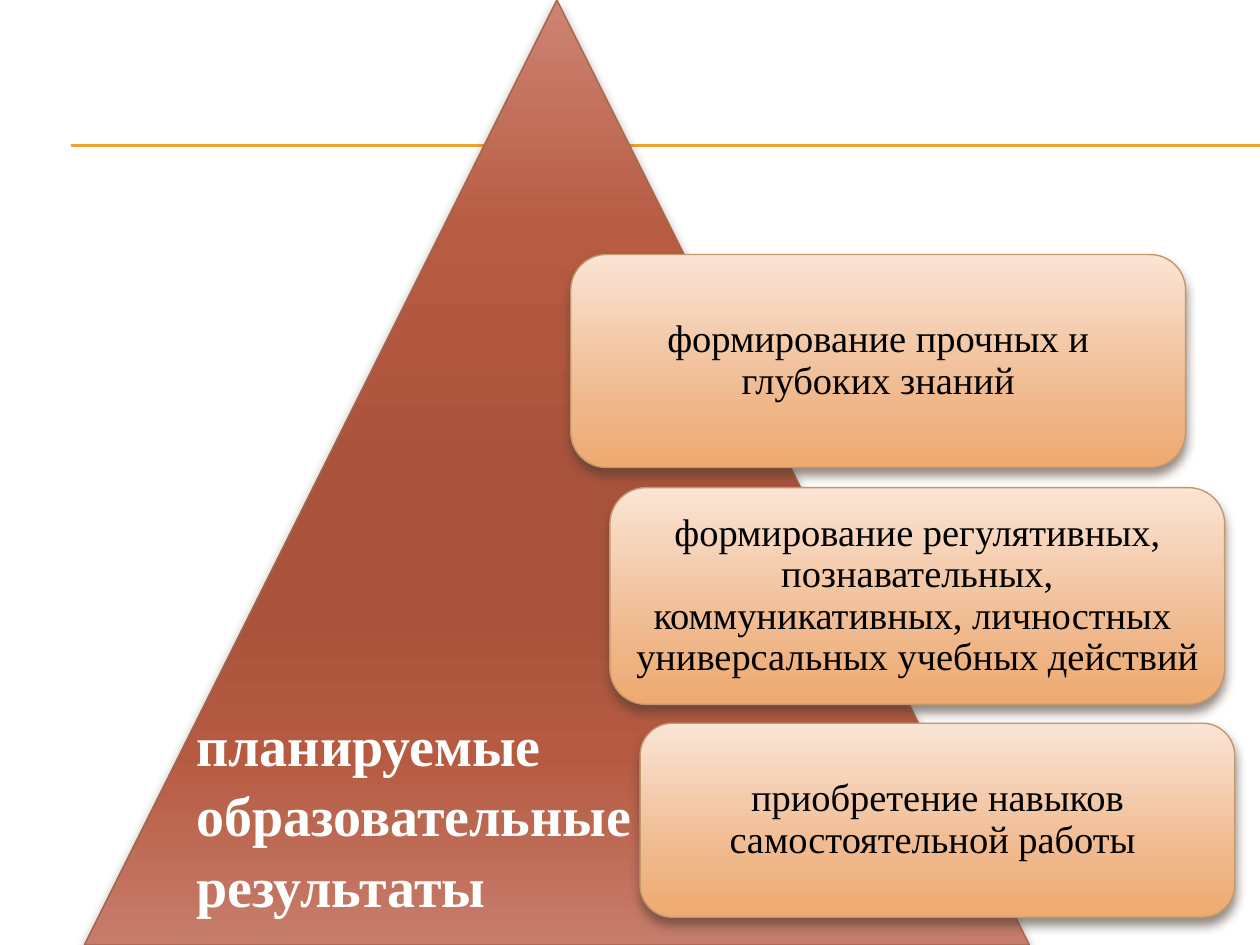
from lxml import etree
from pptx import Presentation
from pptx.dml.color import RGBColor
from pptx.enum.shapes import MSO_CONNECTOR as CONNECTOR, MSO_SHAPE as SHAPE
from pptx.enum.text import MSO_ANCHOR as ANCHOR, PP_ALIGN as ALIGN
from pptx.oxml.ns import qn
from pptx.util import Inches, Pt

COLORS = {
    "rule": "F0A22E",
    "triangle_line": "A5644E",
    "card_line": "C3986D",
    "shadow": "4E3B30",
    "card_text": "000000",
    "caption": "FFFFFF",
}
TRIANGLE_STOPS = [(0, "CD8473"), (25, "B75B42"), (50, "AA533C"),
                  (65, "AA533C"), (80, "B65B42"), (100, "C77D6B")]
CARD_STOPS = [(0, "FAE4D5"), (72, "EFB688"), (100, "EFAA6F")]


def style_shape(shape, stops, line_color):
    shape.fill.gradient()
    shape.fill.gradient_angle = 270
    stop_list = shape._element.spPr.find(qn("a:gradFill")).find(qn("a:gsLst"))
    for old_stop in list(stop_list):
        stop_list.remove(old_stop)
    for position, color in stops:
        stop = etree.SubElement(stop_list, qn("a:gs"), pos=str(position * 1000))
        etree.SubElement(stop, qn("a:srgbClr"), val=color)
    shape.line.color.rgb = RGBColor.from_string(COLORS[line_color])
    shape.line.width = Pt(0.79)
    effects = etree.SubElement(shape._element.spPr, qn("a:effectLst"))
    shadow = etree.SubElement(effects, qn("a:outerShdw"), blurRad=str(Pt(6)),
                              dist=str(Pt(4)), dir="5400000", rotWithShape="0")
    color = etree.SubElement(shadow, qn("a:srgbClr"), val=COLORS["shadow"])
    etree.SubElement(color, qn("a:alpha"), val="60000")


def add_text(paragraph, text, size, color, bold=False):
    run = paragraph.add_run()
    run.text = text
    run.font.name = "Times New Roman"
    run.font.size = Pt(size)
    run.font.bold = bold
    run.font.color.rgb = RGBColor.from_string(COLORS[color])


presentation = Presentation()
presentation.slide_width = Inches(10)
presentation.slide_height = Inches(7.5)
slide = presentation.slides.add_slide(presentation.slide_layouts[6])

for top in (1.15, 1.16):
    rule = slide.shapes.add_connector(
        CONNECTOR.STRAIGHT, Inches(0.56), Inches(top), Inches(10), Inches(top))
    rule.line.color.rgb = RGBColor.from_string(COLORS["rule"])
    rule.line.width = Pt(0.75)
    etree.SubElement(rule._element.spPr, qn("a:effectLst"))

triangle = slide.shapes.add_shape(
    SHAPE.ISOSCELES_TRIANGLE, Inches(0.67), 0, Inches(7.5), Inches(7.5))
style_shape(triangle, TRIANGLE_STOPS, "triangle_line")

cards = [
    (4.53, 2.02, 4.88, 1.69, "формирование прочных и глубоких знаний"),
    (4.84, 3.87, 4.88, 1.72, "формирование регулятивных, познавательных, "
     "коммуникативных, личностных  универсальных учебных действий"),
    (5.08, 5.74, 4.72, 1.54, "приобретение навыков самостоятельной работы "),
]
for left, top, width, height, text in cards:
    card = slide.shapes.add_shape(
        SHAPE.ROUNDED_RECTANGLE, Inches(left), Inches(top), Inches(width), Inches(height))
    style_shape(card, CARD_STOPS, "card_line")
    frame = card.text_frame
    frame.word_wrap = True
    frame.vertical_anchor = ANCHOR.MIDDLE
    frame.margin_left = frame.margin_right = Inches(0.09)
    frame.margin_top = frame.margin_bottom = Inches(0.09)
    paragraph = frame.paragraphs[0]
    paragraph.alignment = ALIGN.CENTER
    paragraph.line_spacing = 0.9
    add_text(paragraph, text, 22, "card_text")

caption = slide.shapes.add_textbox(Inches(1.46), Inches(5.56), Inches(3.96), Inches(1.72))
caption.text_frame.word_wrap = True
for index, word in enumerate(("планируемые", "образовательные", "результаты")):
    frame = caption.text_frame
    paragraph = frame.add_paragraph() if index else frame.paragraphs[0]
    paragraph.line_spacing = 1.05
    add_text(paragraph, word, 32, "caption", bold=True)

presentation.save("out.pptx")
